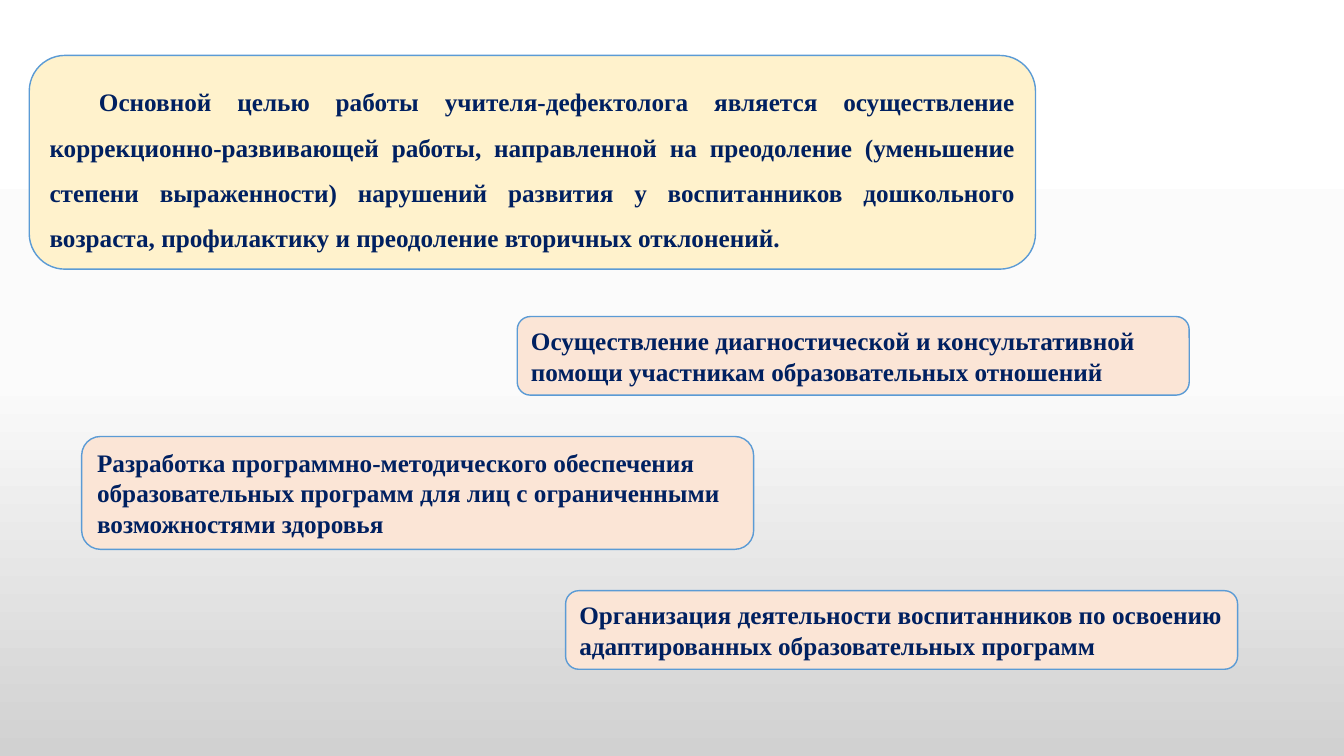
from copy import deepcopy
from dataclasses import dataclass

from pptx import Presentation
from pptx.dml.color import RGBColor
from pptx.enum.shapes import MSO_SHAPE
from pptx.enum.text import MSO_ANCHOR, MSO_AUTO_SIZE, PP_ALIGN
from pptx.oxml.ns import qn
from pptx.util import Inches, Pt

ROUNDED = MSO_SHAPE.ROUNDED_RECTANGLE
MIDDLE = MSO_ANCHOR.MIDDLE
GROW = MSO_AUTO_SIZE.SHAPE_TO_FIT_TEXT
LEFT, JUSTIFY = PP_ALIGN.LEFT, PP_ALIGN.JUSTIFY


@dataclass(frozen=True)
class Theme:
    font: str = "Times New Roman"
    text_size: float = 18
    outline_width: float = 1
    text: str = "002060"
    outline: str = "5B9BD5"
    goal_fill: str = "FFF2CC"
    task_fill: str = "FBE5D6"
    backdrop: tuple = ((0, "FFFFFF"), (0.5, "FBFBFB"), (1, "D1D1D1"))


THEME = Theme()
SLIDE_WIDTH, SLIDE_HEIGHT = 13.33, 7.5
TASK_WIDTH = SLIDE_WIDTH / 2
TWO_LINES, THREE_LINES = 0.78, 1.12
TASK_GAP = 0.41
TASKS_TOP = 3.14
GOAL_BOX = (0.29, 0.55, 9.98, 2.12)

GOAL = (
    "Основной целью работы учителя-дефектолога является осуществление "
    "коррекционно-развивающей работы, направленной на преодоление (уменьшение "
    "степени выраженности) нарушений развития у воспитанников дошкольного "
    "возраста, профилактику и преодоление вторичных отклонений."
)
# Left edge, height and wording of each task, from top to bottom
TASKS = (
    (5.13, TWO_LINES,
     "Осуществление диагностической и консультативной помощи участникам "
     "образовательных отношений"),
    (0.81, THREE_LINES,
     "Разработка программно-методического обеспечения образовательных программ "
     "для лиц с ограниченными возможностями здоровья"),
    (5.61, TWO_LINES,
     "Организация деятельности воспитанников по освоению адаптированных "
     "образовательных программ"),
)


def paint_backdrop(slide):
    fill = slide.background.fill
    fill.gradient()
    fill.gradient_angle = 270
    stop_list = slide.element.find(".//" + qn("a:gsLst"))
    stop_list.insert(1, deepcopy(stop_list[0]))
    for stop, (position, color) in zip(fill.gradient_stops, THEME.backdrop):
        stop.position = position
        stop.color.rgb = RGBColor.from_string(color)


def add_card(slide, box, wording, fill_color, alignment=LEFT):
    """Draw a rounded card with bold text and return its paragraph."""
    card = slide.shapes.add_shape(ROUNDED, *(Inches(length) for length in box))
    card.shadow.inherit = False
    card.fill.solid()
    card.fill.fore_color.rgb = RGBColor.from_string(fill_color)
    card.line.color.rgb = RGBColor.from_string(THEME.outline)
    card.line.width = Pt(THEME.outline_width)

    frame = card.text_frame
    frame.word_wrap = True
    frame.auto_size = GROW
    frame.vertical_anchor = MIDDLE
    paragraph = frame.paragraphs[0]
    paragraph.alignment = alignment
    run = paragraph.add_run()
    run.text = wording
    run.font.name = THEME.font
    run.font.size = Pt(THEME.text_size)
    run.font.bold = True
    run.font.color.rgb = RGBColor.from_string(THEME.text)
    return paragraph


def add_goal(slide, box):
    paragraph = add_card(slide, box, GOAL, THEME.goal_fill, JUSTIFY)
    paragraph.line_spacing = 1.5
    properties = paragraph._p.get_or_add_pPr()
    properties.set("marL", "0")
    properties.set("indent", str(Inches(0.49)))


def add_tasks(slide, top):
    """Stack the task cards downwards with equal gaps."""
    for left, height, wording in TASKS:
        add_card(slide, (left, top, TASK_WIDTH, height), wording, THEME.task_fill)
        top += height + TASK_GAP


def main():
    presentation = Presentation()
    presentation.slide_width = Inches(SLIDE_WIDTH)
    presentation.slide_height = Inches(SLIDE_HEIGHT)
    slide = presentation.slides.add_slide(presentation.slide_layouts[6])
    paint_backdrop(slide)
    add_goal(slide, GOAL_BOX)
    add_tasks(slide, TASKS_TOP)
    presentation.save("out.pptx")


if __name__ == "__main__":
    main()
